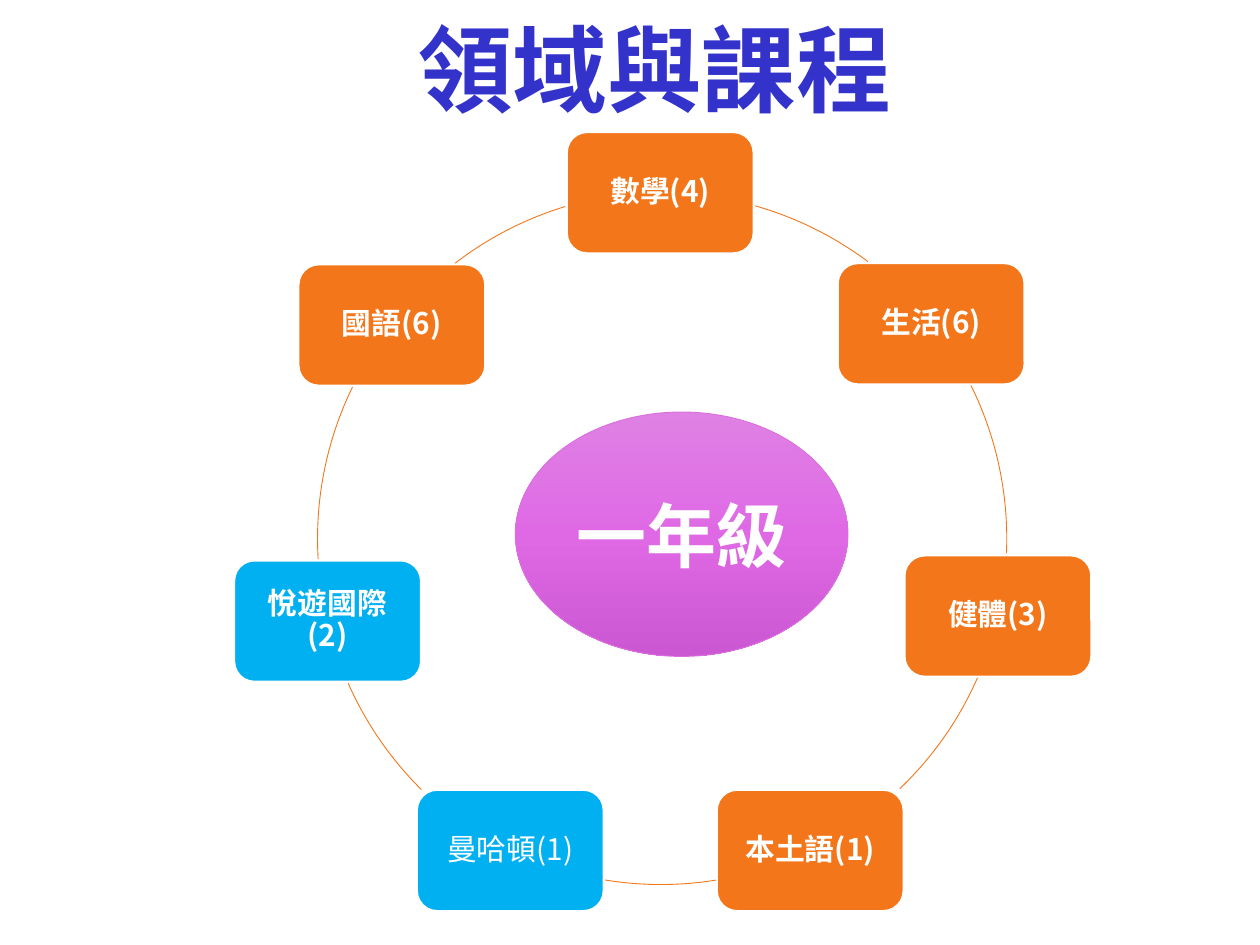
from copy import deepcopy

from lxml import etree
from pptx import Presentation
from pptx.dml.color import RGBColor
from pptx.enum import shapes, text
from pptx.oxml import ns
from pptx.util import Inches, Pt

BLUE = RGBColor(0x33, 0x33, 0xCC)
ORANGE = RGBColor(0xF3, 0x77, 0x1A)
SKY = RGBColor(0x00, 0xB0, 0xF0)
WHITE = RGBColor(0xFF, 0xFF, 0xFF)
ORCHID = RGBColor(0xDA, 0x6F, 0xDF)
ORCHID_STOPS = [
    (0, RGBColor(0xDF, 0x81, 0xE4)),
    (0.5, RGBColor(0xDF, 0x69, 0xE5)),
    (1, RGBColor(0xCC, 0x57, 0xD2)),
]
SANS_SC = "Noto Sans CJK SC"
SANS_TC = "Noto Sans CJK TC"
DIAGRAM = (1.86, 1.05, 6.8, 6.18)
CARD_SIZE = (1.48, 0.96)
RING_SIZE = 5.49

SUBJECTS = [
    ("數學(4)", 2.64, 0, ORANGE, True),
    ("生活(6)", 4.79, 1.04, ORANGE, True),
    ("健體(3)", 5.32, 3.36, ORANGE, True),
    ("本土語(1)", 3.83, 5.22, ORANGE, True),
    ("曼哈頓(1)", 1.45, 5.22, SKY, False),
    ("悅遊國際(2)", 0, 3.4, SKY, True),
    ("國語(6)", 0.51, 1.05, ORANGE, True),
]
ARCS = [
    (0.64, 0.48, 285.8, 306.8),
    (0.64, 0.48, 333.7, 2.4),
    (0.64, 0.48, 23.7, 46.3),
    (0.64, 0.48, 80.7, 99.3),
    (0.67, 0.52, 134.7, 156.2),
    (0.66, 0.48, 176.6, 206),
    (0.68, 0.47, 232.4, 253.1),
]


def apply_format(target, values):
    """Set every attribute named in a dict of format values."""
    for name, value in values.items():
        setattr(target, name, value)


def write_text(shape, words, face, size, color, bold, align, frame_format, spacing=1.0):
    """Write one formatted paragraph into a shape."""
    frame = shape.text_frame
    apply_format(frame, {"word_wrap": True, **frame_format})
    para = frame.paragraphs[0]
    apply_format(para, {"alignment": align, "line_spacing": spacing})
    span = para.add_run()
    span.text = words
    apply_format(span.font, {"name": face, "size": Pt(size), "bold": bold})
    span.font.color.rgb = color
    east_asian = etree.SubElement(span.font._element, ns.qn("a:ea"))
    east_asian.set("typeface", face)


def add_outlined(page, kind, box, line_color, line_width):
    """Add a preset shape without shadow and with a solid outline."""
    shape = page.shapes.add_shape(kind, *(Inches(length) for length in box))
    shape.shadow.inherit = False
    shape.line.color.rgb = line_color
    shape.line.width = Pt(line_width)
    return shape


def add_title(page, box):
    """Place the slide title in its box."""
    title = page.shapes.add_textbox(*(Inches(length) for length in box))
    write_text(title, "領域與課程", SANS_SC, 54, BLUE, True, text.PP_ALIGN.LEFT,
               {"vertical_anchor": text.MSO_ANCHOR.BOTTOM}, 0.9)


def add_ring(page, box):
    """Place the arcs that link the subject cards."""
    left, top = box[:2]
    for x, y, start, end in ARCS:
        arc_box = (left + x, top + y, RING_SIZE, RING_SIZE)
        arc = add_outlined(page, shapes.MSO_SHAPE.ARC, arc_box, ORANGE, 0.5)
        arc.fill.background()
        for index, degrees in enumerate((start, end)):
            arc.adjustments[index] = degrees * 0.6


def add_cards(page, box):
    """Place the subject cards around the ring."""
    left, top = box[:2]
    margins = {f"margin_{side}": Inches(0.12) for side in ("left", "top", "right", "bottom")}
    for words, x, y, color, bold in SUBJECTS:
        card = add_outlined(page, shapes.MSO_SHAPE.ROUNDED_RECTANGLE,
                            (left + x, top + y, *CARD_SIZE), WHITE, 1)
        card.fill.solid()
        card.fill.fore_color.rgb = color
        write_text(card, words, SANS_TC, 17, WHITE, bold, text.PP_ALIGN.CENTER,
                   {"vertical_anchor": text.MSO_ANCHOR.MIDDLE, **margins}, 0.9)


def add_grade(page, box):
    """Place the gradient ellipse that names the grade."""
    grade = add_outlined(page, shapes.MSO_SHAPE.OVAL, box, ORCHID, 0.5)
    grade.fill.gradient()
    grade.fill.gradient_angle = 270
    stop_list = grade._element.spPr.find(".//" + ns.qn("a:gsLst"))
    stop_list.append(deepcopy(stop_list[0]))
    for stop, (position, color) in zip(grade.fill.gradient_stops, ORCHID_STOPS):
        stop.position = position
        stop.color.rgb = color
    write_text(grade, "一年級", SANS_SC, 40, WHITE, True, text.PP_ALIGN.CENTER,
               {"vertical_anchor": text.MSO_ANCHOR.MIDDLE})


def main():
    """Build the curriculum slide and save it."""
    deck = Presentation()
    deck.slide_width, deck.slide_height = Inches(10), Inches(7.5)
    page = deck.slides.add_slide(deck.slide_layouts[6])
    add_title(page, (3.22, 0.19, 4.49, 0.86))
    add_ring(page, DIAGRAM)
    add_cards(page, DIAGRAM)
    add_grade(page, (4.09, 3.27, 2.64, 1.94))
    deck.save("out.pptx")


if __name__ == "__main__":
    main()
